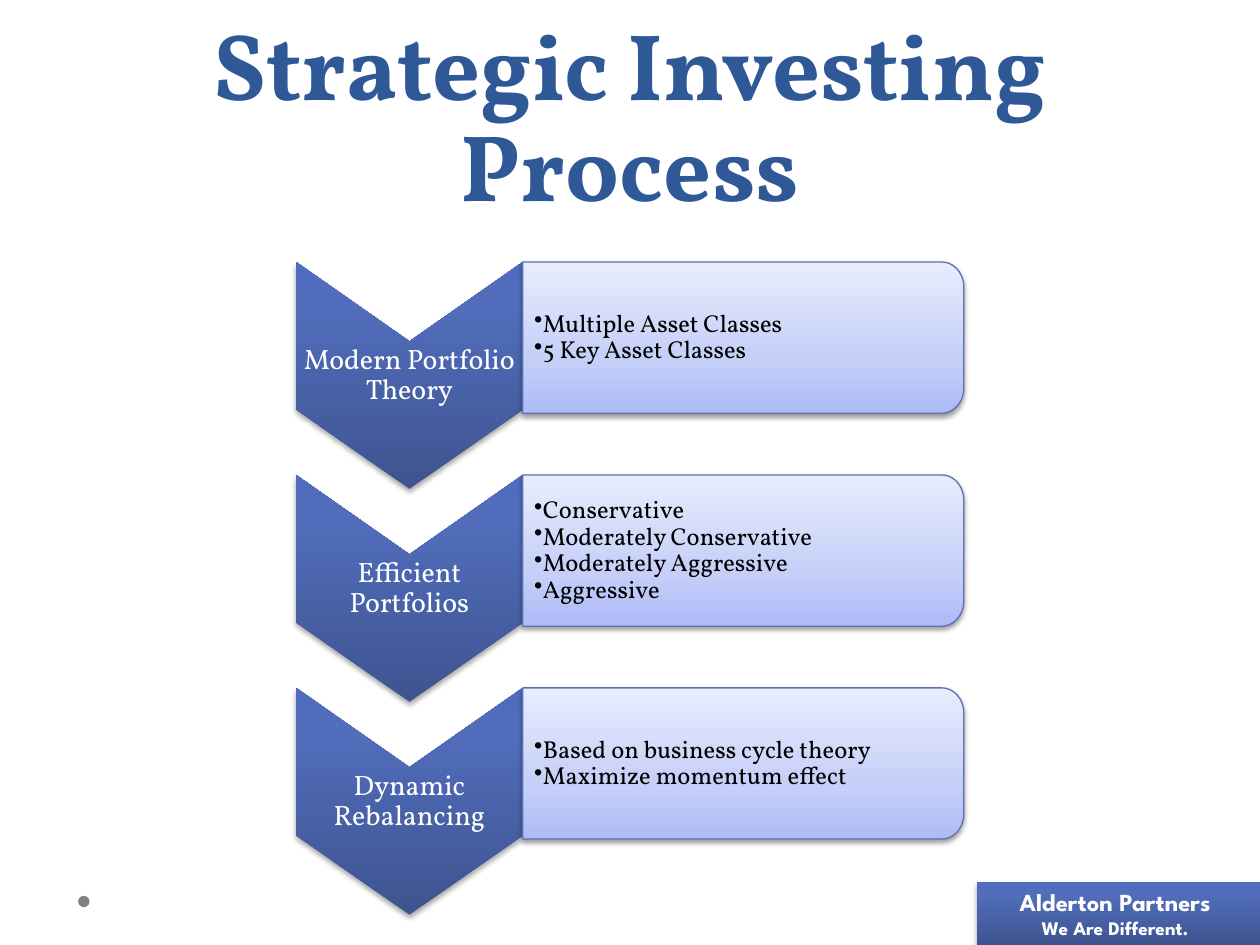
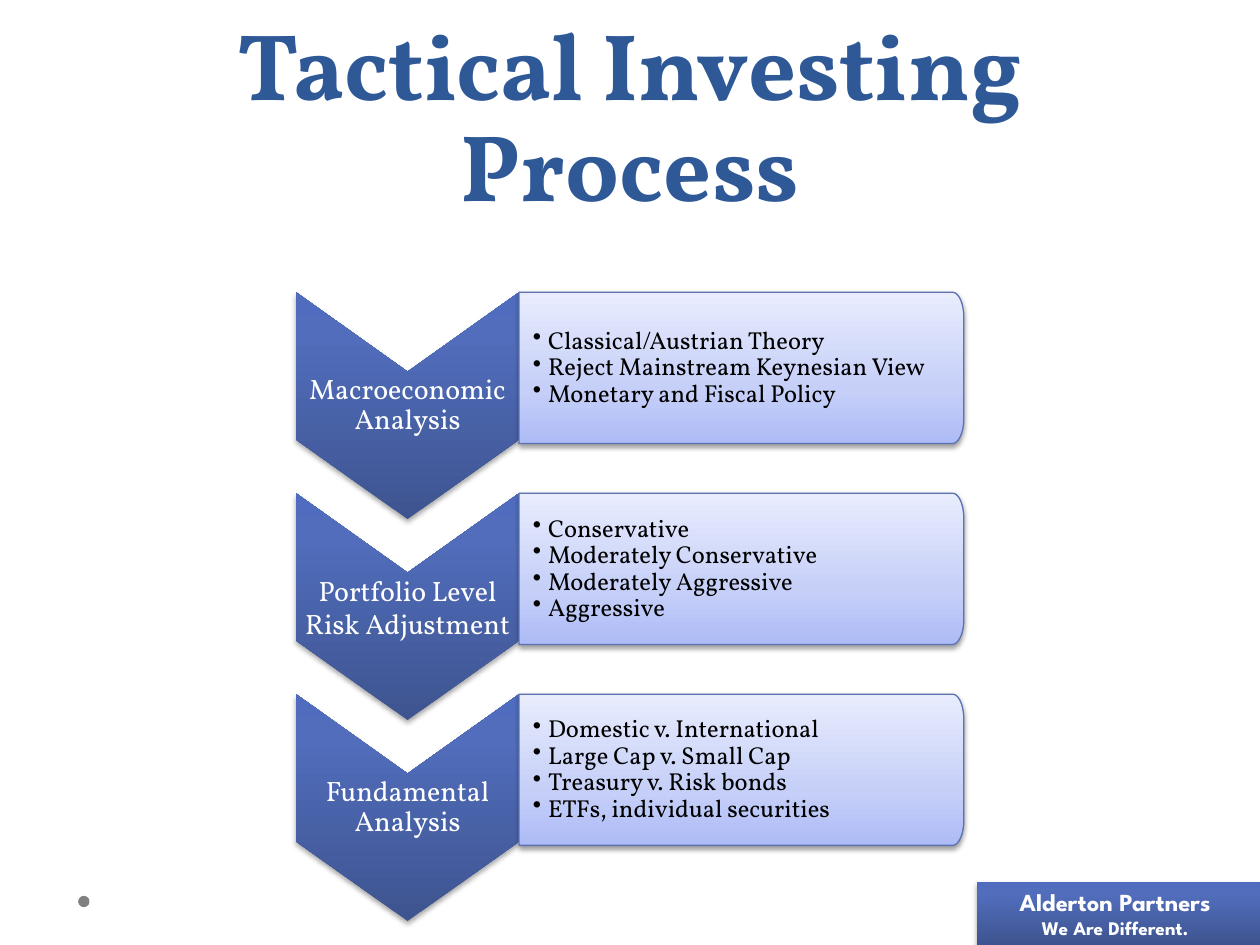
import copy
import math
from dataclasses import dataclass

import lxml.etree
import pptx
import pptx.dml.color
import pptx.enum.shapes
import pptx.enum.text
import pptx.oxml.ns
import pptx.util

RGBColor = pptx.dml.color.RGBColor
ALIGN = pptx.enum.text.PP_ALIGN
ANCHOR = pptx.enum.text.MSO_ANCHOR
SHAPES = pptx.enum.shapes.MSO_SHAPE

WHITE = RGBColor(0xFF, 0xFF, 0xFF)
BLACK = RGBColor(0x00, 0x00, 0x00)
GRAY = RGBColor(0x80, 0x80, 0x80)
TITLE_BLUE = RGBColor(0x2F, 0x58, 0x97)
CARD_EDGE = RGBColor(0x5C, 0x72, 0xB2)
DARK_GRADIENT = (
    (0, RGBColor(0x3E, 0x54, 0x90)),
    (0.8, RGBColor(0x51, 0x6D, 0xBB)),
    (1, RGBColor(0x4F, 0x6C, 0xBE)),
)
LIGHT_GRADIENT = (
    (0, RGBColor(0xAD, 0xBB, 0xF6)),
    (0.35, RGBColor(0xC5, 0xCF, 0xF8)),
    (1, RGBColor(0xE8, 0xEC, 0xFD)),
)

SERIF = "Vollkorn"
SANS = "League Spartan"

SLIDE_WIDTH = pptx.util.Inches(10)
SLIDE_HEIGHT = pptx.util.Inches(7.5)
COLUMNS = 20
CELL = SLIDE_WIDTH // COLUMNS

STEP_LEFT = 4.7
STEP_RIGHT = 15.3
CHEVRON_ROWS = 3.6
CARD_ROWS = 2.4
NOTCH_SHARE = 0.35
CORNER_ROWS = 0.4


@dataclass
class Step:
    name: str
    points: tuple
    spacing: float = 0.9


@dataclass
class Process:
    title: str
    steps: tuple
    top: float
    pitch: float
    split: float
    corner: float
    card_inset: float
    bullet_indent: float


STRATEGIC = Process(
    title="Strategic Investing Process",
    steps=(
        Step("Modern Portfolio Theory",
             ("Multiple Asset Classes", "5 Key Asset Classes")),
        Step("Efficient Portfolios",
             ("Conservative", "Moderately Conservative",
              "Moderately Aggressive", "Aggressive")),
        Step("Dynamic Rebalancing",
             ("Based on business cycle theory", "Maximize momentum effect")),
    ),
    top=4.16, pitch=3.38, split=8.3, corner=0.35,
    card_inset=0.18, bullet_indent=0.12,
)

TACTICAL = Process(
    title="Tactical Investing\nProcess",
    steps=(
        Step("Macroeconomic Analysis",
             ("Classical/Austrian Theory", "Reject Mainstream Keynesian View",
              "Monetary and Fiscal Policy")),
        Step("Portfolio Level Risk Adjustment",
             ("Conservative", "Moderately Conservative",
              "Moderately Aggressive", "Aggressive"), spacing=1.0),
        Step("Fundamental Analysis",
             ("Domestic v. International", "Large Cap v. Small Cap",
              "Treasury v. Risk bonds", "ETFs, individual securities")),
    ),
    top=4.64, pitch=3.19, split=8.24, corner=0.18,
    card_inset=0.22, bullet_indent=0.24,
)


def cells(count):
    return pptx.util.Emu(round(count * CELL))


def add_child(parent, tag, **attributes):
    child = lxml.etree.SubElement(parent, pptx.oxml.ns.qn(tag))
    for name, value in attributes.items():
        child.set(name, str(value))
    return child


def write_paragraph(paragraph, text, *, size, color, font=SERIF, bold=False,
                    align=ALIGN.CENTER, spacing=None, bullet_indent=None):
    paragraph.text = text
    paragraph.alignment = align
    paragraph.line_spacing = spacing
    paragraph.space_before = paragraph.space_after = pptx.util.Pt(0)
    for run in paragraph.runs:
        run.font.name = font
        run.font.size = pptx.util.Pt(size)
        run.font.bold = bold
        run.font.color.rgb = color
    if bullet_indent is not None:
        properties = paragraph._p.get_or_add_pPr()
        properties.set("marL", str(cells(bullet_indent)))
        properties.set("indent", str(-cells(bullet_indent)))
        add_child(properties, "a:buChar", char="•")


def prepare_frame(shape, left, top, right, bottom, anchor=ANCHOR.MIDDLE):
    frame = shape.text_frame
    frame.word_wrap = True
    frame.auto_size = pptx.enum.text.MSO_AUTO_SIZE.NONE
    frame.vertical_anchor = anchor
    frame.margin_left, frame.margin_top = cells(left), cells(top)
    frame.margin_right, frame.margin_bottom = cells(right), cells(bottom)
    return frame


def fill_gradient(shape, stops):
    shape.fill.gradient()
    shape.fill.gradient_angle = 90
    stop_list = shape._element.spPr.find(
        pptx.oxml.ns.qn("a:gradFill")).find(pptx.oxml.ns.qn("a:gsLst"))
    stop_list.append(copy.deepcopy(stop_list[0]))
    for stop, (position, color) in zip(shape.fill.gradient_stops, stops):
        stop.position = position
        stop.color.rgb = color


def add_shadow(shape, opacity, distance):
    shape.shadow.inherit = False
    effects = shape._element.spPr.find(pptx.oxml.ns.qn("a:effectLst"))
    shadow = add_child(effects, "a:outerShdw", blurRad=pptx.util.Pt(3.1),
                       dist=pptx.util.Pt(distance), dir=5400000, rotWithShape=0)
    color = add_child(shadow, "a:srgbClr", val=BLACK)
    add_child(color, "a:alpha", val=opacity * 1000)


def style_dark(shape):
    fill_gradient(shape, DARK_GRADIENT)
    shape.line.fill.background()
    add_shadow(shape, 35, 1.8)


def add_outline(slide, points):
    points = [(cells(column), cells(row)) for column, row in points]
    builder = slide.shapes.build_freeform(*points[0])
    builder.add_line_segments(points[1:], close=True)
    return builder.convert_to_shape()


def add_chevron(slide, step, top, right):
    middle = (STEP_LEFT + right) / 2
    notch = CHEVRON_ROWS * NOTCH_SHARE
    bottom = top + CHEVRON_ROWS
    shape = add_outline(slide, [
        (right, top), (right, bottom - notch), (middle, bottom),
        (STEP_LEFT, bottom - notch), (STEP_LEFT, top), (middle, top + notch),
    ])
    style_dark(shape)
    frame = prepare_frame(shape, 0.02, 1.1, 0.02, 1.1)
    write_paragraph(frame.paragraphs[0], step.name, size=16, color=WHITE,
                    spacing=step.spacing)


def corner_arc(column, row, width, height, start):
    angles = [math.radians(start + 9 * index) for index in range(11)]
    return [(column + width * math.cos(angle), row + height * math.sin(angle))
            for angle in angles]


def add_card(slide, process, step, top):
    bottom = top + CARD_ROWS
    center = STEP_RIGHT - process.corner
    shape = add_outline(slide, [
        (process.split, top),
        *corner_arc(center, top + CORNER_ROWS, process.corner, CORNER_ROWS, -90),
        *corner_arc(center, bottom - CORNER_ROWS, process.corner, CORNER_ROWS, 0),
        (process.split, bottom),
    ])
    fill_gradient(shape, LIGHT_GRADIENT)
    shape.line.color.rgb = CARD_EDGE
    shape.line.width = pptx.util.Pt(0.75)
    add_shadow(shape, 38, 1.6)
    frame = prepare_frame(shape, process.card_inset, 0.12, 0.12, 0.12)
    for index, point in enumerate(step.points):
        paragraph = frame.add_paragraph() if index else frame.paragraphs[0]
        write_paragraph(paragraph, point, size=14, color=BLACK,
                        align=ALIGN.LEFT, spacing=0.9,
                        bullet_indent=process.bullet_indent)


def add_title(slide, text):
    title = slide.shapes.title
    title.left, title.top = cells(1), cells(0)
    title.width, title.height = cells(18), cells(3.6)
    frame = prepare_frame(title, 0.2, 0.1, 0.2, 0.1, ANCHOR.BOTTOM)
    write_paragraph(frame.paragraphs[0], text, size=54, color=TITLE_BLUE,
                    bold=True, spacing=pptx.util.Pt(58))


def add_dot(slide):
    dot = slide.shapes.add_shape(SHAPES.OVAL, cells(1.24), cells(14.22),
                                 cells(0.18), cells(0.18))
    dot.shadow.inherit = False
    dot.fill.solid()
    dot.fill.fore_color.rgb = GRAY
    dot.line.fill.background()


def add_firm_badge(slide):
    badge = slide.shapes.add_shape(SHAPES.RECTANGLE, cells(15.5), cells(14),
                                   cells(4.5), cells(1))
    style_dark(badge)
    frame = prepare_frame(badge, 0.1, 0.1, 0.2, 0.1)
    write_paragraph(frame.paragraphs[0], "Alderton Partners", size=14,
                    color=WHITE, font=SANS, bold=True)
    write_paragraph(frame.add_paragraph(), "We Are Different.", size=11,
                    color=WHITE, font=SANS, bold=True)


def add_process_slide(presentation, process):
    slide = presentation.slides.add_slide(presentation.slide_layouts[5])
    add_dot(slide)
    add_title(slide, process.title)
    for index, step in enumerate(process.steps):
        top = process.top + index * process.pitch
        add_chevron(slide, step, top, process.split)
        add_card(slide, process, step, top)
    add_firm_badge(slide)


def main():
    presentation = pptx.Presentation()
    presentation.slide_width = SLIDE_WIDTH
    presentation.slide_height = SLIDE_HEIGHT
    for process in (STRATEGIC, TACTICAL):
        add_process_slide(presentation, process)
    presentation.save("out.pptx")


if __name__ == "__main__":
    main()
